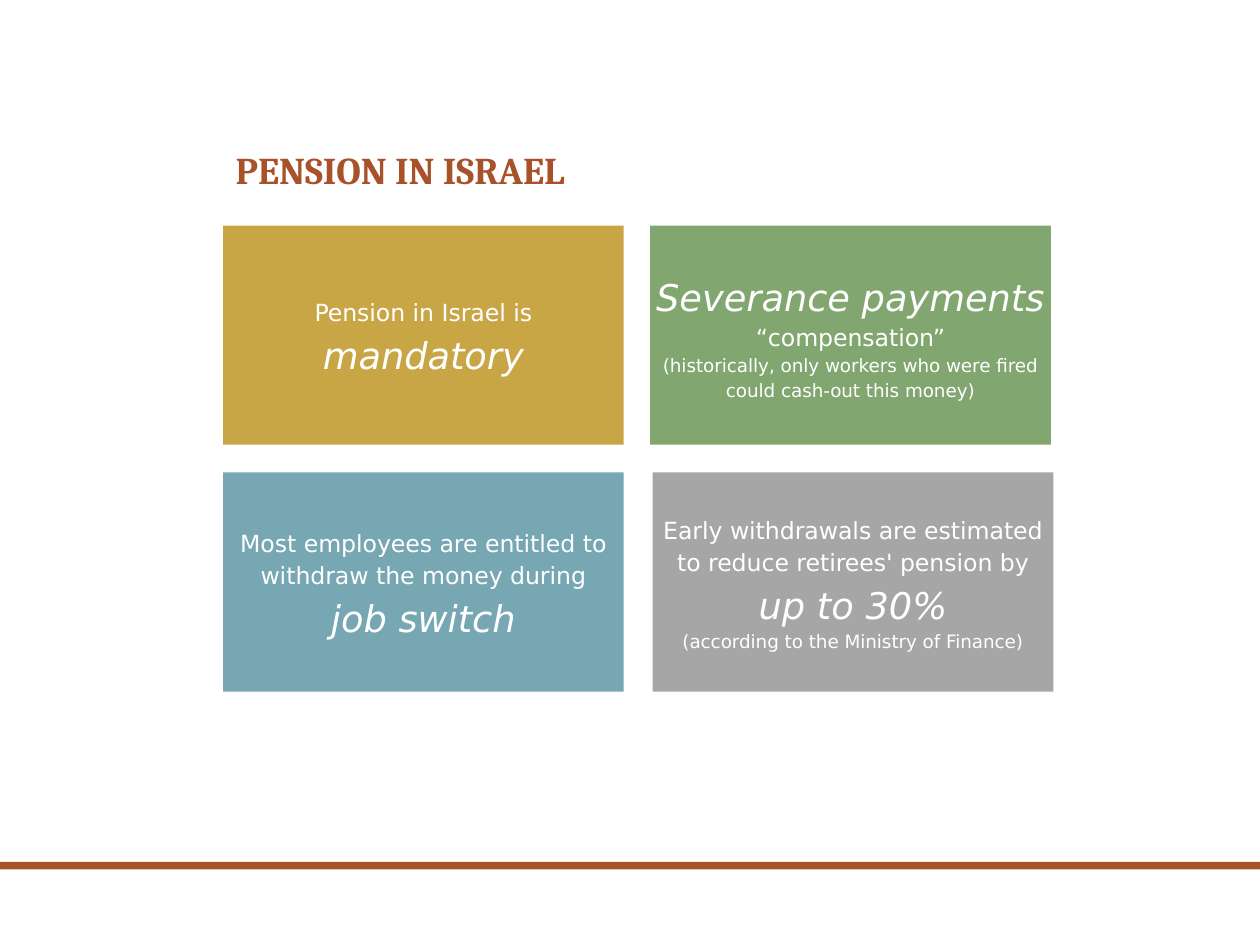
from pptx import Presentation
from pptx.dml.color import RGBColor
from pptx.enum.shapes import MSO_SHAPE as Shape
from pptx.enum.text import MSO_ANCHOR as Anchor, MSO_AUTO_SIZE as AutoSize, PP_ALIGN as Align
from pptx.util import Inches, Pt

RUST = "A85229"
CARD_WIDTH, CARD_HEIGHT = 3.18, 1.74
LEFT_COLUMN, TOP_ROW, BOTTOM_ROW = 1.77, 1.79, 3.75

# Text styles of the cards
BODY = {"size": Pt(13.5), "italic": False}
KEYWORD = {"size": Pt(21), "italic": True}
NOTE = {"size": Pt(10.5), "italic": False}

# Each card: left, top, fill, paragraphs of (text, style) runs
CARDS = [
    (LEFT_COLUMN, TOP_ROW, "C9A645", [
        [("Pension in Israel is ", BODY), ("mandatory", KEYWORD)],
    ]),
    (5.16, TOP_ROW, "82A670", [
        [("Severance payments", KEYWORD)],
        [("“compensation”", BODY)],
        [("(historically, only workers who were fired could cash-out this money)", NOTE)],
    ]),
    (LEFT_COLUMN, BOTTOM_ROW, "76A7B2", [
        [("Most employees are entitled to withdraw the money during", BODY)],
        [("job switch", KEYWORD)],
    ]),
    (5.18, BOTTOM_ROW, "A6A6A6", [
        [("Early withdrawals are estimated to reduce retirees' pension by", BODY)],
        [("up to 30%", KEYWORD)],
        [("(according to the Ministry of Finance)", NOTE)],
    ]),
]


def color(hex_value):
    return RGBColor.from_string(hex_value)


def apply(target, values):
    for name, value in values.items():
        setattr(target, name, value)


def add_block(slide, left, top, width, height, fill):
    block = slide.shapes.add_shape(
        Shape.RECTANGLE, Inches(left), Inches(top), Inches(width), Inches(height))
    block.shadow.inherit = False
    block.fill.solid()
    block.fill.fore_color.rgb = color(fill)
    block.line.fill.background()
    return block


def add_run(paragraph, text, style, font_name, font_color):
    run = paragraph.add_run()
    run.text = text
    apply(run.font, {"name": font_name, **style})
    run.font.color.rgb = color(font_color)


def set_title(slide, text):
    title = slide.shapes.title
    apply(title, {"left": Inches(1.77), "top": Inches(1.24),
                  "width": Inches(6.47), "height": Inches(0.34)})
    frame = title.text_frame
    apply(frame, {"vertical_anchor": Anchor.BOTTOM, "word_wrap": True,
                  "auto_size": AutoSize.NONE})
    heading = frame.paragraphs[0]
    apply(heading, {"alignment": Align.LEFT, "line_spacing": 0.9})
    add_run(heading, text, {"size": Pt(21.6), "bold": True}, "Cambria", RUST)


def add_card(slide, left, top, fill, paragraphs):
    card = add_block(slide, left, top, CARD_WIDTH, CARD_HEIGHT, fill)
    frame = card.text_frame
    apply(frame, {"word_wrap": True, "vertical_anchor": Anchor.MIDDLE})
    apply(frame, {f"margin_{side}": Inches(0.03)
                  for side in ("left", "top", "right", "bottom")})
    for index, runs in enumerate(paragraphs):
        paragraph = frame.add_paragraph() if index else frame.paragraphs[0]
        apply(paragraph, {"alignment": Align.CENTER, "line_spacing": 1.14})
        for text, style in runs:
            add_run(paragraph, text, style, "DejaVu Sans", "FFFFFF")


def main():
    deck = Presentation()
    apply(deck, {"slide_width": Inches(10), "slide_height": Inches(7.5)})
    slide = deck.slides.add_slide(deck.slide_layouts[5])

    # Footer stripe
    add_block(slide, 0, 6.84, 10, 0.06, RUST)

    set_title(slide, "PENSION IN ISRAEL")
    for card in CARDS:
        add_card(slide, *card)

    deck.save("out.pptx")


if __name__ == "__main__":
    main()
